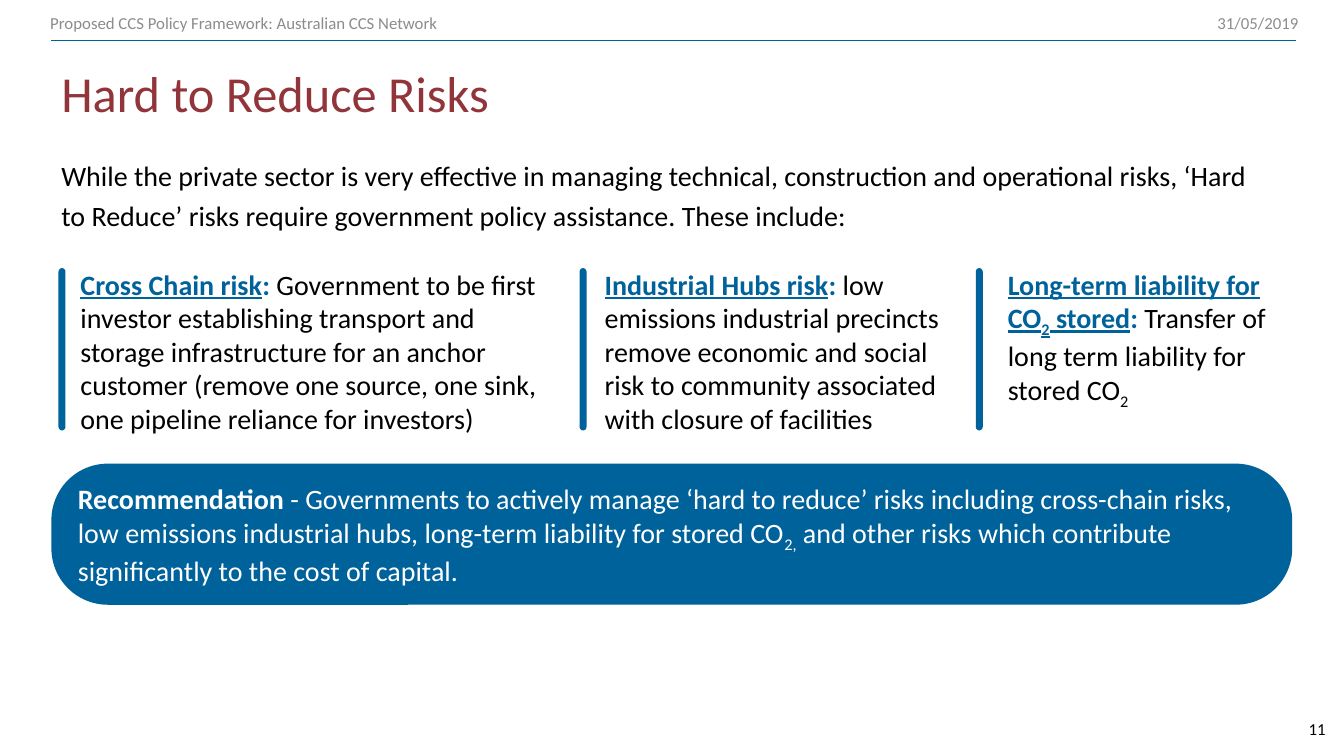
from pptx import Presentation
from pptx.dml.color import RGBColor
from pptx.enum.shapes import MSO_CONNECTOR as Connector, MSO_SHAPE as Shape
from pptx.enum.text import MSO_ANCHOR as Anchor, PP_ALIGN as Align
from pptx.oxml.ns import qn
from pptx.util import Pt
from lxml.etree import SubElement

FONT = "Calibri"
COLORS = {"blue": "00629B", "red": "91353B", "grey": "8C8C8C", "black": "000000", "white": "FFFFFF"}
STYLES = {
    "plain": {},
    "sub": {"subscript": True},
    "bold": {"bold": True},
    "key": {"bold": True, "underline": True, "color": "blue"},
    "key_sub": {"bold": True, "underline": True, "color": "blue", "subscript": True},
    "colon": {"bold": True, "color": "blue"},
}
RISKS = [
    (14.4, 380, 128, 44.3, [
        ("Cross Chain risk", "key"), (": ", "colon"),
        ("Government to be first investor establishing transport and storage infrastructure "
         "for an anchor customer (remove one source, one sink, one pipeline reliance for investors)", "plain"),
    ]),
    (388.8, 293, 128, 416.5, [
        ("Industrial Hubs risk", "key"), (": ", "colon"),
        ("low emissions industrial precincts remove economic and social risk to community "
         "associated with closure of facilities", "plain"),
    ]),
    (676.8, 257.8, 104.4, 699.5, [
        ("Long-term liability for CO", "key"), ("2", "key_sub"), (" stored", "key"), (": ", "colon"),
        ("Transfer of long term liability for stored CO", "plain"), ("2", "sub"),
    ]),
]
RECOMMENDATION = [
    ("Recommendation", "bold"),
    (" - Governments to actively manage ‘hard to reduce’ risks including cross-chain risks, "
     "low emissions industrial hubs, long-term liability for stored CO", "plain"),
    ("2,", "sub"),
    (" and other risks which contribute significantly to the cost of capital.", "plain"),
]


def rgb(name):
    return RGBColor.from_string(COLORS[name])


def write(shape, spans, size, color, align=Align.LEFT, anchor=Anchor.TOP, spacing=None, indent=0):
    frame = shape.text_frame
    frame.word_wrap = True
    frame.vertical_anchor = anchor
    paragraph = frame.paragraphs[0]
    paragraph.alignment = align
    paragraph.line_spacing = spacing
    if indent:
        properties = paragraph._p.get_or_add_pPr()
        properties.set("marL", str(Pt(indent)))
        properties.set("indent", "0")
    paragraph.font.name = FONT
    paragraph.font.size = Pt(size)
    paragraph.font.color.rgb = rgb(color)
    for text, style_name in spans:
        style = STYLES[style_name]
        run = paragraph.add_run()
        run.text = text
        run.font.name = FONT
        run.font.size = Pt(size)
        run.font.color.rgb = rgb(style.get("color", color))
        run.font.bold = style.get("bold", False)
        run.font.underline = style.get("underline", False)
        if style.get("subscript"):
            run._r.get_or_add_rPr().set("baseline", "-25000")


def add_text(slide, left, top, width, height, spans, size, color, **layout):
    box = slide.shapes.add_textbox(Pt(left), Pt(top), Pt(width), Pt(height))
    if isinstance(spans, str):
        spans = [(spans, "plain")]
    write(box, spans, size, color, **layout)


def add_round_box(slide, left, top, width, height, rounding):
    shape = slide.shapes.add_shape(Shape.ROUNDED_RECTANGLE, Pt(left), Pt(top), Pt(width), Pt(height))
    shape.adjustments[0] = rounding
    shape.shadow.inherit = False
    shape.fill.solid()
    shape.fill.fore_color.rgb = rgb("blue")
    shape.line.fill.background()
    return shape


def add_rule(slide, left, right, y):
    rule = slide.shapes.add_connector(Connector.STRAIGHT, Pt(left), Pt(y), Pt(right), Pt(y))
    rule.line.color.rgb = rgb("blue")
    rule.line.width = Pt(0.75)
    SubElement(rule._element.spPr, qn("a:effectLst"))


def add_risk(slide, left, width, height, bar_center, spans):
    add_text(slide, left, 187.2, width, height, spans, 20, "black", indent=36)
    add_round_box(slide, bar_center - 2.5, 191.5, 5, 116, 0.5)


def main():
    presentation = Presentation()
    presentation.slide_width = Pt(960)
    presentation.slide_height = Pt(540)
    slide = presentation.slides.add_slide(presentation.slide_layouts[6])

    add_rule(slide, 36.7, 926, 28.8)
    add_text(slide, 36.7, 46, 876, 53.3, "Hard to Reduce Risks", 36, "red", spacing=0.9)
    add_text(slide, 36.7, 105, 876, 342.7,
             "While the private sector is very effective in managing technical, construction and operational "
             "risks, ‘Hard to Reduce’ risks require government policy assistance. These include:",
             20, "black", spacing=1.2)
    add_text(slide, 658.8, 4.3, 275.8, 24.5, "31/05/2019", 12, "grey", align=Align.RIGHT, anchor=Anchor.MIDDLE)
    add_text(slide, 28.8, 4.3, 411, 24.5, "Proposed CCS Policy Framework: Australian CCS Network",
             12, "grey", anchor=Anchor.MIDDLE)
    add_text(slide, 890, 509.8, 64, 28, "11", 12, "black", align=Align.RIGHT)
    banner = add_round_box(slide, 36.7, 331.2, 886.3, 100.8, 0.4)
    write(banner, RECOMMENDATION, 20, "white", anchor=Anchor.MIDDLE)
    for risk in RISKS:
        add_risk(slide, *risk)

    presentation.save("out.pptx")


if __name__ == "__main__":
    main()
